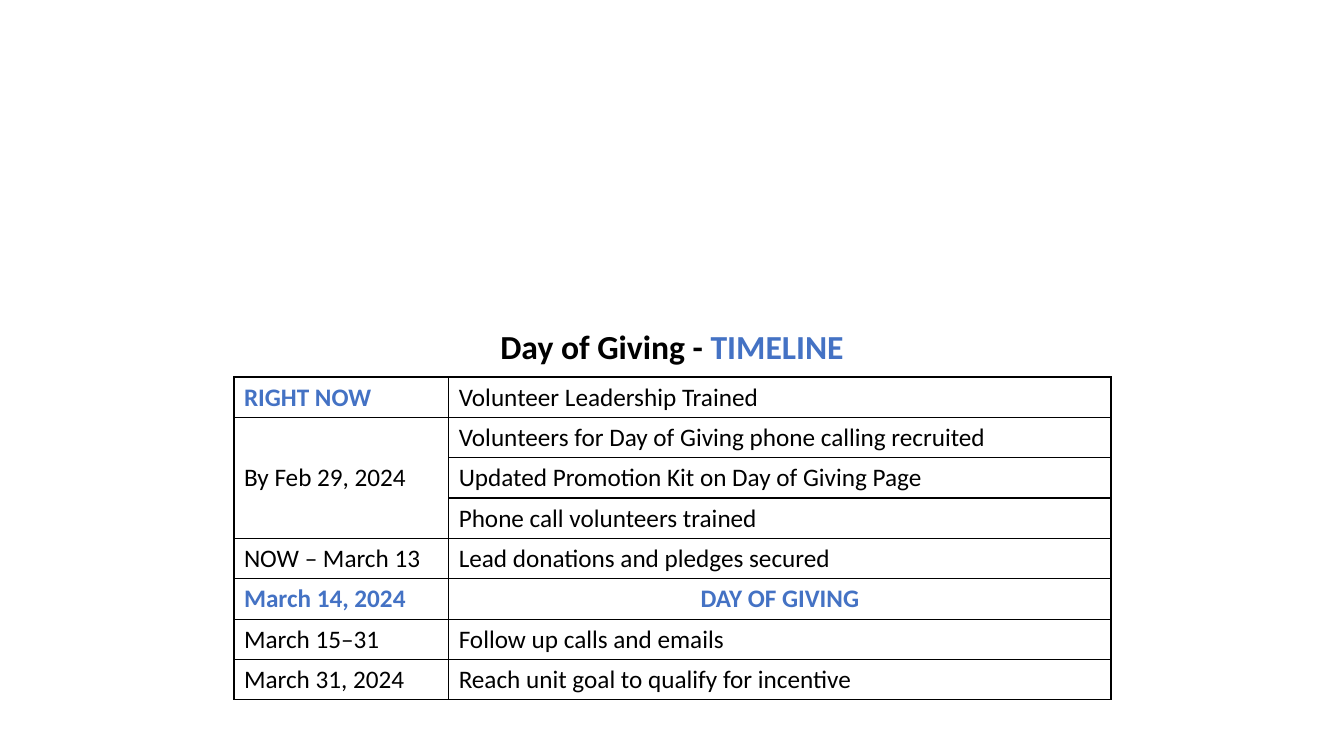
from typing import NamedTuple

import pptx
import pptx.dml.color
import pptx.enum.text
import pptx.oxml
import pptx.oxml.ns
import pptx.util
from pptx.util import Inches

RGBColor = pptx.dml.color.RGBColor
PP_ALIGN = pptx.enum.text.PP_ALIGN

BLACK = RGBColor(0x00, 0x00, 0x00)
BLUE = RGBColor(0x44, 0x72, 0xC4)
FONT = "Calibri"
COL_WIDTHS = (2.13, 6.57)
ROW_HEIGHT = 0.4


class Entry(NamedTuple):
    text: str
    highlight: bool = False
    align: PP_ALIGN = PP_ALIGN.LEFT


class Step(NamedTuple):
    date: Entry
    tasks: tuple[Entry, ...]


STEPS = (
    Step(Entry("RIGHT NOW", True), (Entry("Volunteer Leadership Trained"),)),
    Step(Entry("By Feb 29, 2024"), (
        Entry("Volunteers for Day of Giving phone calling recruited"),
        Entry("Updated Promotion Kit on Day of Giving Page"),
        Entry("Phone call volunteers trained"),
    )),
    Step(Entry("NOW – March 13"), (Entry("Lead donations and pledges secured"),)),
    Step(Entry("March 14, 2024", True),
         (Entry("DAY OF GIVING", True, PP_ALIGN.CENTER),)),
    Step(Entry("March 15–31"), (Entry("Follow up calls and emails"),)),
    Step(Entry("March 31, 2024"),
         (Entry("Reach unit goal to qualify for incentive"),)),
)


def add_run(p, text: str, size: int, color: RGBColor, bold: bool) -> None:
    r = p.add_run()
    r.text = text
    r.font.name = FONT
    r.font.size = pptx.util.Pt(size)
    r.font.bold = bold
    r.font.color.rgb = color


def style_cell(cell) -> None:
    cell.fill.background()
    cell.vertical_anchor = pptx.enum.text.MSO_ANCHOR.MIDDLE
    tc_pr = cell._tc.get_or_add_tcPr()
    for i, side in enumerate(("lnL", "lnR", "lnT", "lnB")):
        tc_pr.insert(i, pptx.oxml.parse_xml(
            f'<a:{side} {pptx.oxml.ns.nsdecls("a")} w="{pptx.util.Pt(1)}">'
            f'<a:solidFill><a:srgbClr val="{BLACK}"/></a:solidFill></a:{side}>'
        ))


def fill_cell(cell, entry: Entry) -> None:
    p = cell.text_frame.paragraphs[0]
    p.alignment = entry.align
    add_run(p, entry.text, 18, BLUE if entry.highlight else BLACK, entry.highlight)


def add_title(s) -> None:
    sp = s.shapes.add_textbox(Inches(1.9), Inches(3.18), Inches(9.53), Inches(0.5))
    tf = sp.text_frame
    tf.word_wrap = True
    tf.auto_size = pptx.enum.text.MSO_AUTO_SIZE.SHAPE_TO_FIT_TEXT
    p = tf.paragraphs[0]
    p.alignment = PP_ALIGN.CENTER
    add_run(p, "Day of Giving - ", 24, BLACK, True)
    add_run(p, "TIMELINE", 24, BLUE, True)


def add_timeline(s) -> None:
    n_rows = sum(len(step.tasks) for step in STEPS)
    table = s.shapes.add_table(
        n_rows, len(COL_WIDTHS), Inches(2.32), Inches(3.74),
        Inches(sum(COL_WIDTHS)), Inches(n_rows * ROW_HEIGHT),
    ).table
    table.first_row = False
    table.horz_banding = False
    for col, width in zip(table.columns, COL_WIDTHS):
        col.width = Inches(width)
    for row in table.rows:
        row.height = Inches(ROW_HEIGHT)
    for cell in table.iter_cells():
        style_cell(cell)
    top = 0
    for step in STEPS:
        last = top + len(step.tasks) - 1
        if last > top:
            table.cell(top, 0).merge(table.cell(last, 0))
        fill_cell(table.cell(top, 0), step.date)
        for i, task in enumerate(step.tasks, top):
            fill_cell(table.cell(i, 1), task)
        top = last + 1


def main() -> None:
    prs = pptx.Presentation()
    prs.slide_width = Inches(13.33)
    prs.slide_height = Inches(7.5)
    s = prs.slides.add_slide(prs.slide_layouts[6])
    add_title(s)
    add_timeline(s)
    prs.save("out.pptx")


if __name__ == "__main__":
    main()
